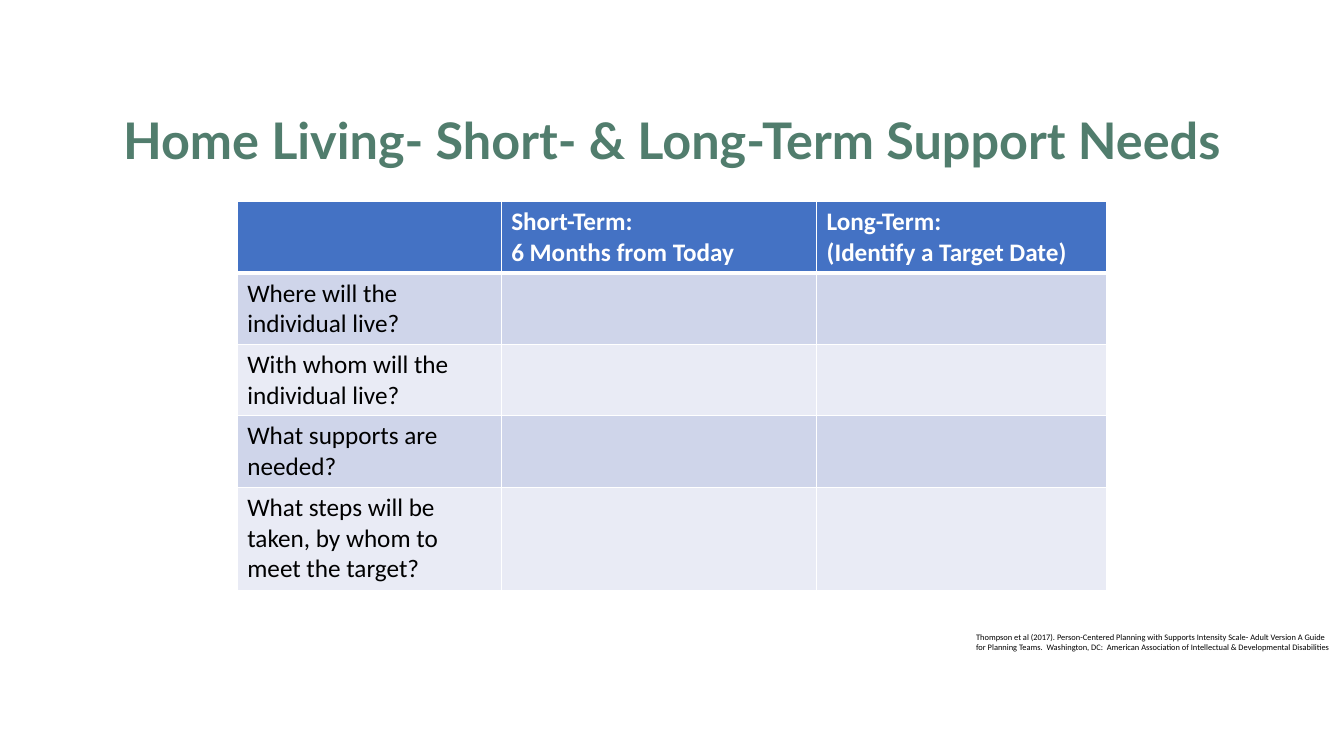
from lxml.etree import SubElement
from pptx import Presentation
from pptx.dml.color import RGBColor
from pptx.enum.text import MSO_ANCHOR, PP_ALIGN
from pptx.oxml.ns import qn
from pptx.util import Cm, Pt

TITLE = "Home Living- Short- & Long-Term Support Needs"
HEADS = ["", "Short-Term:\n6 Months from Today", "Long-Term:\n(Identify a Target Date)"]
ASKS = [
    "Where will the individual live?",
    "With whom will the individual live?",
    "What supports are needed?",
    "What steps will be taken, by whom to meet the target?",
]
CITE = (
    "Thompson et al (2017). Person-Centered Planning with Supports Intensity Scale- "
    "Adult Version A Guide for Planning Teams.  Washington, DC:  American Association "
    "of Intellectual & Developmental Disabilities"
)
WIDTHS = [6.65, 7.95, 7.3]
HEIGHTS = [1.8, 1.8, 1.8, 1.8, 2.6]
BANDS = ["CFD5EA", "E9EBF5"]


def color(code):
    return RGBColor.from_string(code)


def style(frame, tint, **font):
    """Apply the font values and colour to every paragraph of the frame."""
    for para in frame.paragraphs:
        for key, value in font.items():
            setattr(para.font, key, value)
        para.font.color.rgb = color(tint)


def add_text(slide, text, box, tint, **font):
    frame = slide.shapes.add_textbox(*map(Cm, box)).text_frame
    frame.word_wrap = True
    frame.text = text
    style(frame, tint, **font)
    return frame


def add_edges(cell, sizes):
    """Draw white borders; sizes maps each side to its width in points."""
    props = cell._tc.get_or_add_tcPr()
    for side, size in sizes.items():
        line = SubElement(props, qn(f"a:ln{side}"), w=str(Pt(size)))
        fill = SubElement(line, qn("a:solidFill"))
        SubElement(fill, qn("a:srgbClr"), val="FFFFFF")


def add_grid(slide, left, top):
    texts = [HEADS] + [[ask, "", ""] for ask in ASKS]
    size = Cm(sum(WIDTHS)), Cm(sum(HEIGHTS))
    grid = slide.shapes.add_table(
        len(HEIGHTS), len(WIDTHS), Cm(left), Cm(top), *size
    ).table
    for col, width in zip(grid.columns, WIDTHS):
        col.width = Cm(width)
    for r, (row, height) in enumerate(zip(grid.rows, HEIGHTS)):
        row.height = Cm(height)
        head = r == 0
        edges = {"L": 1, "R": 1, "T": 3 if r == 1 else 1, "B": 3 if head else 1}
        for cell, text in zip(row.cells, texts[r]):
            add_edges(cell, edges)
            cell.fill.solid()
            cell.fill.fore_color.rgb = color("4472C4" if head else BANDS[(r - 1) % 2])
            cell.text = text
            tint = "FFFFFF" if head else "000000"
            style(cell.text_frame, tint, name="Calibri", size=Pt(18), bold=head)


def main():
    deck = Presentation()
    deck.slide_width, deck.slide_height = Cm(33.87), Cm(19.05)
    slide = deck.slides.add_slide(deck.slide_layouts[6])

    title = add_text(slide, TITLE, (2.33, 1.78, 29.21, 3.68), "517D6D",
                     name="Lato", size=Pt(36), bold=True)
    title.vertical_anchor = MSO_ANCHOR.MIDDLE
    title.paragraphs[0].alignment = PP_ALIGN.CENTER
    title.paragraphs[0].line_spacing = 0.9

    add_grid(slide, 5.98, 5.08)
    add_text(slide, CITE, (24.35, 15.8, 9.52, 0.76), "000000",
             name="Calibri", size=Pt(6))
    deck.save("out.pptx")


if __name__ == "__main__":
    main()
